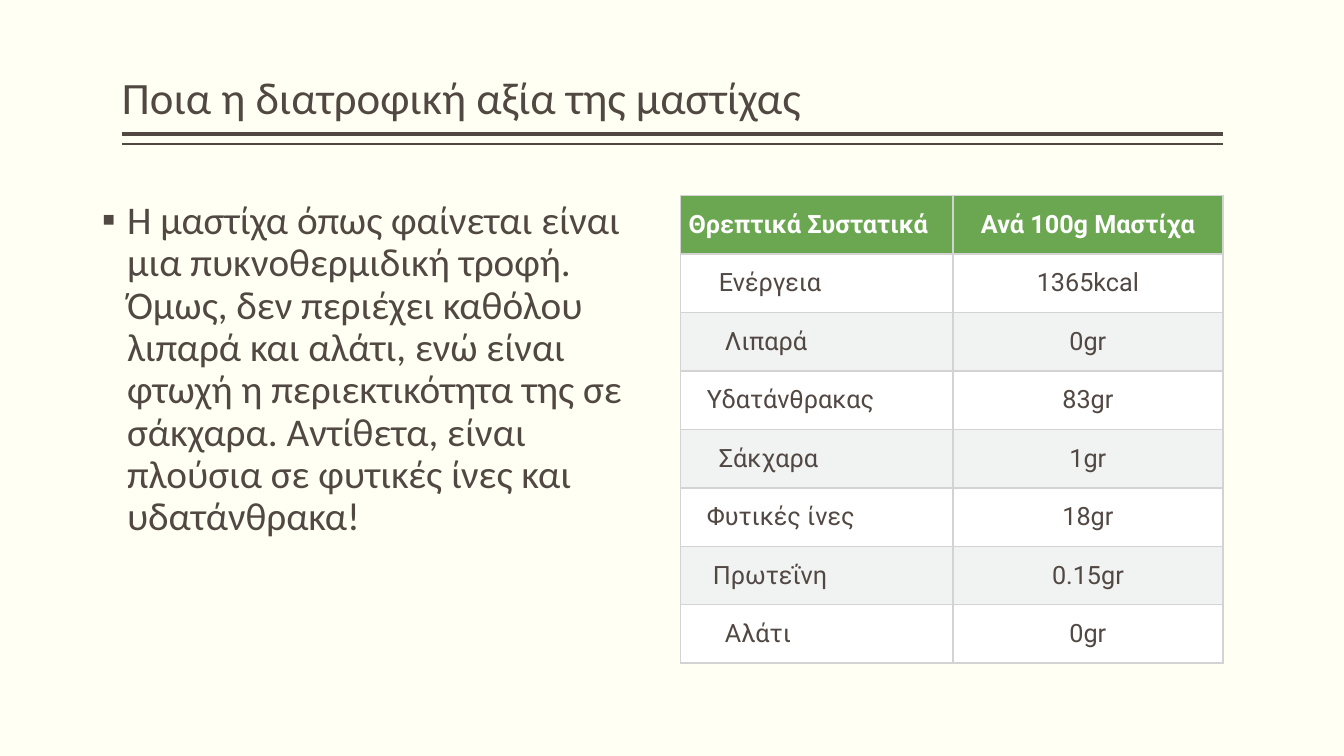
"""Build the slide on the nutritional value of mastic."""
from lxml.etree import SubElement
from pptx import Presentation
from pptx.dml.color import RGBColor
from pptx.enum.shapes import MSO_CONNECTOR
from pptx.enum.text import MSO_ANCHOR, MSO_AUTO_SIZE, PP_ALIGN
from pptx.oxml import parse_xml
from pptx.oxml.ns import nsdecls, qn
from pptx.util import Inches, Pt

BACKGROUND = RGBColor(0xFF, 0xFF, 0xF3)
BROWN = RGBColor(0x51, 0x48, 0x43)
GREEN = RGBColor(0x6B, 0xA6, 0x50)
WHITE = RGBColor(0xFF, 0xFF, 0xFF)
GREY = RGBColor(0xF1, 0xF2, 0xF2)
BORDER = RGBColor(0xD3, 0xD3, 0xD3)

TITLE = "Ποια η διατροφική αξία της μαστίχας"
BODY = (
    "Η μαστίχα όπως φαίνεται είναι μια πυκνοθερμιδική τροφή. "
    "Όμως, δεν περιέχει καθόλου λιπαρά και αλάτι, ενώ είναι φτωχή "
    "η περιεκτικότητα της σε σάκχαρα. Αντίθετα, είναι πλούσια σε "
    "φυτικές ίνες και υδατάνθρακα!"
)
HEADER = ("Θρεπτικά Συστατικά", "Ανά 100g Μαστίχα")
NUTRIENTS = [
    ("Ενέργεια", "1365kcal", 5),
    ("Λιπαρά", "0gr", 6),
    ("Υδατάνθρακας", "83gr", 3),
    ("Σάκχαρα", "1gr", 5),
    ("Φυτικές ίνες", "18gr", 3),
    ("Πρωτεΐνη", "0.15gr", 4),
    ("Αλάτι", "0gr", 6),
]
TITLE_BOX = (1.21, 0.08, 10.92, 1.2)
BODY_BOX = (1.01, 1.94, 5.38, 5)
RULES = [(1.33, 3), (1.43, 1)]
TABLE_LEFT, TABLE_TOP = 6.75, 1.94
COLUMN_WIDTHS = (2.7, 2.68)
ROW_HEIGHT = 0.58
CELL_MARGIN, INDENT_STEP = 0.08, 0.06

TITLE_FONT = {"name": "Calibri", "size": Pt(32), "bold": False}
BODY_FONT = {"name": "Calibri", "size": Pt(28), "bold": False}
HEADER_FONT = {"name": "Roboto", "size": Pt(18), "bold": True}
CELL_FONT = {"name": "Roboto", "size": Pt(18), "bold": False}
FRAME_FORMAT = {
    "margin_left": 0, "margin_right": 0,
    "margin_top": Inches(0.05), "margin_bottom": Inches(0.05),
    "word_wrap": True, "auto_size": MSO_AUTO_SIZE.NONE,
}


def apply_format(target, values):
    """Set every attribute named in values."""
    for name, value in values.items():
        setattr(target, name, value)


def style_font(font, values, color):
    """Apply font values and a colour."""
    apply_format(font, values)
    font.color.rgb = color


def fill_placeholder(shape, box, text, anchor, font_values):
    """Place a placeholder, write its text and return the paragraph."""
    sides = ("left", "top", "width", "height")
    apply_format(shape, dict(zip(sides, map(Inches, box))))
    frame = shape.text_frame
    apply_format(frame, FRAME_FORMAT)
    frame.vertical_anchor = anchor
    frame.text = text
    para = frame.paragraphs[0]
    apply_format(para, {"alignment": PP_ALIGN.LEFT, "line_spacing": 0.9,
                        "space_before": Pt(0)})
    style_font(para.runs[0].font, font_values, font_values and BROWN)
    return para


def add_bullet(para):
    """Give a paragraph a square bullet with a hanging indent."""
    properties = para._p.get_or_add_pPr()
    properties.set("marL", str(Inches(0.25)))
    properties.set("indent", str(-Inches(0.25)))
    SubElement(properties, qn("a:buFont")).set("typeface", "Arial")
    SubElement(properties, qn("a:buChar")).set("char", "▪")


def add_rule(slide, top, weight):
    """Draw one line under the title."""
    left, _, width, _ = TITLE_BOX
    rule = slide.shapes.add_connector(
        MSO_CONNECTOR.STRAIGHT, Inches(left), Inches(top),
        Inches(left + width), Inches(top))
    rule.line.color.rgb = BROWN
    rule.line.width = Pt(weight)
    SubElement(rule._element.spPr, qn("a:effectLst"))


def add_borders(cell):
    """Outline all four sides of a cell."""
    properties = cell._tc.get_or_add_tcPr()
    for position, side in enumerate(("lnL", "lnR", "lnT", "lnB")):
        properties.insert(position, parse_xml(
            f'<a:{side} {nsdecls("a")} w="{Pt(1.2)}"><a:solidFill>'
            f'<a:srgbClr val="{BORDER}"/></a:solidFill></a:{side}>'))


def fill_cell(cell, text, fill, font_values, color, alignment, indent, padding):
    """Write and format one table cell."""
    cell.text = text
    apply_format(cell, {
        "vertical_anchor": MSO_ANCHOR.MIDDLE,
        "margin_left": Inches(CELL_MARGIN + indent * INDENT_STEP),
        "margin_right": Inches(CELL_MARGIN),
        "margin_top": Inches(padding), "margin_bottom": Inches(padding),
    })
    cell.fill.solid()
    cell.fill.fore_color.rgb = fill
    para = cell.text_frame.paragraphs[0]
    para.alignment = alignment
    style_font(para.runs[0].font, font_values, color)
    add_borders(cell)


def add_nutrient_table(slide):
    """Build the table of nutrients per 100 g."""
    rows = [(*HEADER, 0)] + NUTRIENTS
    table = slide.shapes.add_table(
        len(rows), len(COLUMN_WIDTHS), Inches(TABLE_LEFT), Inches(TABLE_TOP),
        Inches(sum(COLUMN_WIDTHS)), Inches(ROW_HEIGHT * len(rows))).table
    for column, width in zip(table.columns, COLUMN_WIDTHS):
        column.width = Inches(width)
    for index, (nutrient, amount, indent) in enumerate(rows):
        table.rows[index].height = Inches(ROW_HEIGHT)
        if index == 0:
            look = (GREEN, HEADER_FONT, WHITE)
            padding = 0.07
        else:
            look = (WHITE if index % 2 else GREY, CELL_FONT, BROWN)
            padding = 0.04
        fill_cell(table.cell(index, 0), nutrient, *look,
                  PP_ALIGN.LEFT, indent, padding)
        fill_cell(table.cell(index, 1), amount, *look,
                  PP_ALIGN.CENTER, 0, padding)


def main():
    """Create the deck and save it."""
    deck = Presentation()
    deck.slide_width, deck.slide_height = Inches(13.33), Inches(7.5)
    slide = deck.slides.add_slide(deck.slide_layouts[1])
    slide.background.fill.solid()
    slide.background.fill.fore_color.rgb = BACKGROUND
    for top, weight in RULES:
        add_rule(slide, top, weight)
    title, body = slide.placeholders
    fill_placeholder(title, TITLE_BOX, TITLE, MSO_ANCHOR.BOTTOM, TITLE_FONT)
    add_bullet(fill_placeholder(body, BODY_BOX, BODY, MSO_ANCHOR.TOP, BODY_FONT))
    add_nutrient_table(slide)
    deck.save("out.pptx")


if __name__ == "__main__":
    main()
